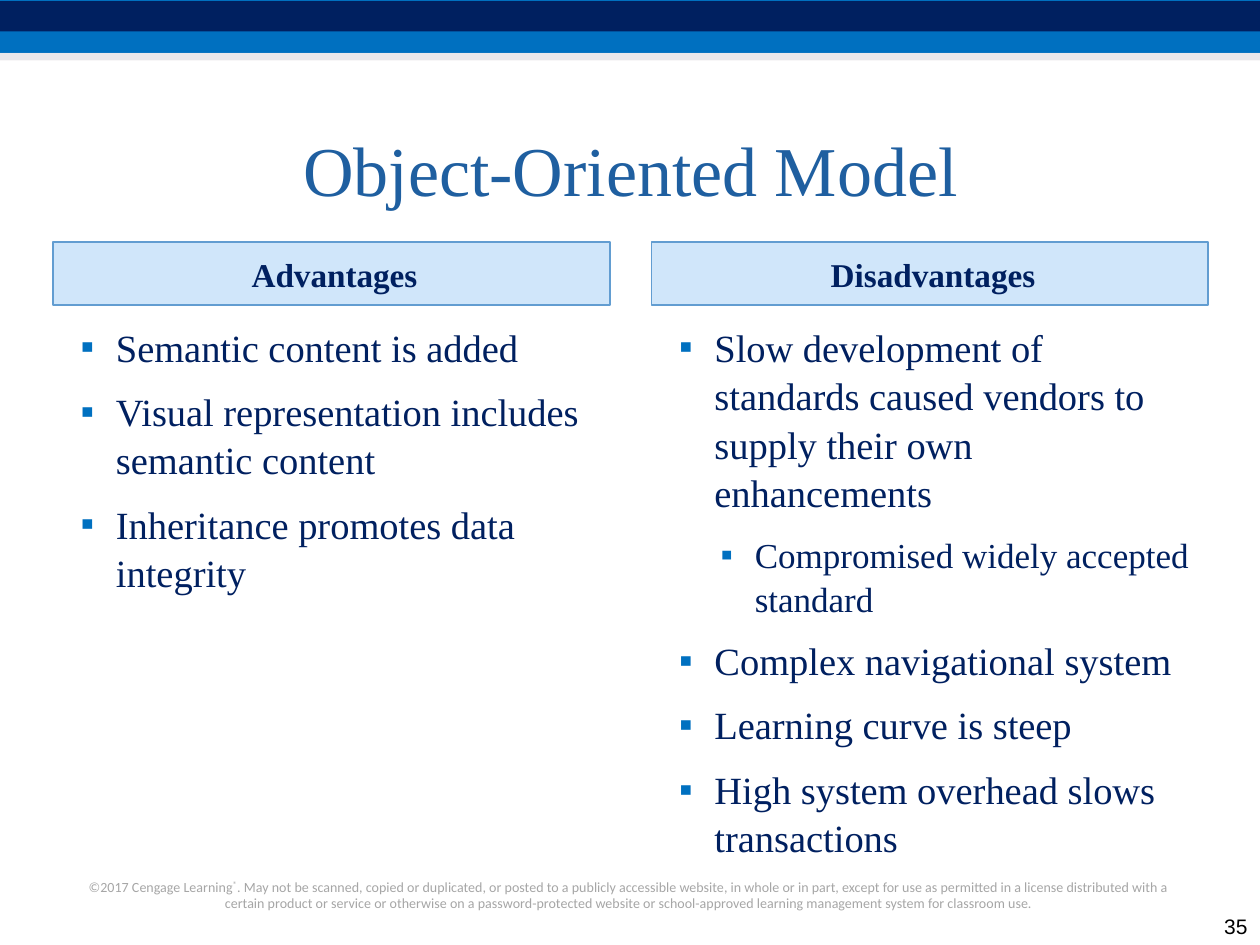
from lxml import etree
from pptx import Presentation
from pptx.dml.color import RGBColor
from pptx.enum.shapes import MSO_SHAPE
from pptx.enum.text import MSO_ANCHOR, MSO_AUTO_SIZE, PP_ALIGN
from pptx.oxml.ns import qn
from pptx.util import Inches, Pt

RECTANGLE = MSO_SHAPE.RECTANGLE
TOP, MIDDLE, BOTTOM = MSO_ANCHOR.TOP, MSO_ANCHOR.MIDDLE, MSO_ANCHOR.BOTTOM
LEFT, CENTER, RIGHT = PP_ALIGN.LEFT, PP_ALIGN.CENTER, PP_ALIGN.RIGHT
NO_FIT = MSO_AUTO_SIZE.NONE

BLUE = RGBColor(0x00, 0x70, 0xC0)
NAVY = RGBColor(0x00, 0x20, 0x60)
PALE = RGBColor(0xD8, 0xD3, 0xD9)
TITLE_BLUE = RGBColor(0x1F, 0x5F, 0xA0)
HEADER_BLUE = RGBColor(0x46, 0x9F, 0xED)
BORDER_BLUE = RGBColor(0x62, 0x9D, 0xD1)
GREY = RGBColor(0xA6, 0xA6, 0xA6)
BLACK = RGBColor(0x00, 0x00, 0x00)

SERIF = "Times New Roman"
LEVELS = [(0.4, -0.28, 22), (0.72, -0.27, 20)]
COLUMN_LEFTS = [0.42, 5.17]
COLUMN_WIDTH = 4.42

BANDS = [
    (0, 0.42, BLUE, 100),
    (0.01, 0.24, NAVY, 100),
    (0.42, 0.06, PALE, 50),
]
COLUMNS = [
    ("Advantages", [
        (0, "Semantic content is added"),
        (0, "Visual representation includes semantic content"),
        (0, "Inheritance promotes data integrity"),
    ]),
    ("Disadvantages", [
        (0, "Slow development of standards caused vendors to supply their own enhancements"),
        (1, "Compromised widely accepted standard"),
        (0, "Complex navigational system"),
        (0, "Learning curve is steep"),
        (0, "High system overhead slows transactions"),
    ]),
]
COPYRIGHT = [
    ("©2017 Cengage Learning", False),
    ("®", True),
    (". May not be scanned, copied or duplicated, or posted to a publicly accessible "
     "website, in whole or in part, except for use as permitted in a license distributed "
     "with a certain product or service or otherwise on a password-protected website or "
     "school-approved learning management system for classroom use.", False),
]


class SlideBuilder:
    def __init__(self, page):
        self.page = page

    def format_font(self, font, color, **values):
        for name, value in values.items():
            setattr(font, name, value)
        font.color.rgb = color

    def fill(self, shape, color, opacity):
        shape.fill.solid()
        shape.fill.fore_color.rgb = color
        if opacity < 100:
            tint = shape.fill._xPr.find(qn("a:solidFill"))[0]
            etree.SubElement(tint, qn("a:alpha")).set("val", str(opacity * 1000))

    def band(self, top, height, color, opacity):
        shape = self.page.shapes.add_shape(
            RECTANGLE, 0, Inches(top), Inches(10), Inches(height))
        shape.shadow.inherit = False
        self.fill(shape, color, opacity)
        shape.line.fill.background()

    def placeholder(self, index, area, anchor):
        box = self.page.placeholders[index]
        box.left, box.top, box.width, box.height = map(Inches, area)
        frame = box.text_frame
        settings = {"word_wrap": True, "auto_size": NO_FIT, "vertical_anchor": anchor}
        for name, value in settings.items():
            setattr(frame, name, value)
        return box

    def title(self, text, area):
        para = self.placeholder(0, area, MIDDLE).text_frame.paragraphs[0]
        para.text = text
        para.alignment = CENTER
        self.format_font(para.runs[0].font, TITLE_BLUE, name=SERIF, size=Pt(40))

    def header(self, index, text, area):
        box = self.placeholder(index, area, MIDDLE)
        self.fill(box, HEADER_BLUE, 25)
        box.line.color.rgb = BORDER_BLUE
        box.line.width = Pt(1)
        para = box.text_frame.paragraphs[0]
        para.text = text
        settings = {"alignment": CENTER, "space_before": Pt(0), "line_spacing": 1.05}
        for name, value in settings.items():
            setattr(para, name, value)
        para._p.get_or_add_pPr().set("marL", str(Inches(0.05)))
        self.format_font(para.runs[0].font, NAVY, name=SERIF, size=Pt(19), bold=True)

    def bullet(self, para, margin, indent):
        props = para._p.get_or_add_pPr()
        props.set("marL", str(Inches(margin)))
        props.set("indent", str(Inches(indent)))
        color = etree.SubElement(props, qn("a:buClr"))
        etree.SubElement(color, qn("a:srgbClr")).set("val", str(BLUE))
        etree.SubElement(props, qn("a:buFont")).set("typeface", "Arial")
        etree.SubElement(props, qn("a:buChar")).set("char", "▪")

    def bullets(self, index, items, area):
        frame = self.placeholder(index, area, TOP).text_frame
        for number, (level, text) in enumerate(items):
            para = frame.add_paragraph() if number else frame.paragraphs[0]
            para.text = text
            margin, indent, size = LEVELS[level]
            self.bullet(para, margin, indent)
            settings = {
                "level": level,
                "alignment": LEFT,
                "line_spacing": 1.05,
                "space_before": Pt(3 if number else 0),
                "space_after": Pt(6),
            }
            for name, value in settings.items():
                setattr(para, name, value)
            self.format_font(para.runs[0].font, NAVY, name=SERIF, size=Pt(size))

    def text(self, spans, area, alignment, anchor, color, **values):
        box = self.page.shapes.add_textbox(*map(Inches, area))
        frame = box.text_frame
        frame.word_wrap = True
        frame.vertical_anchor = anchor
        para = frame.paragraphs[0]
        para.alignment = alignment
        for text, raised in spans:
            span = para.add_run()
            span.text = text
            self.format_font(span.font, color, **values)
            if raised:
                span._r.get_or_add_rPr().set("baseline", "30000")


def main():
    deck = Presentation()
    deck.slide_width, deck.slide_height = Inches(10), Inches(7.5)
    builder = SlideBuilder(deck.slides.add_slide(deck.slide_layouts[4]))
    for band in BANDS:
        builder.band(*band)
    builder.title("Object-Oriented Model", (0.42, 0.75, 9.17, 1.17))
    for number, (heading, items) in enumerate(COLUMNS):
        left = COLUMN_LEFTS[number]
        builder.header(2 * number + 1, heading, (left, 1.92, COLUMN_WIDTH, 0.5))
        builder.bullets(2 * number + 2, items, (left, 2.5, COLUMN_WIDTH, 4.25))
    builder.text(COPYRIGHT, (0.58, 6.92, 8.83, 0.37), CENTER, TOP, GREY,
                 name="Calibri", size=Pt(8))
    builder.text([("35", False)], (9.5, 7.17, 0.5, 0.33), RIGHT, BOTTOM, BLACK,
                 name="Arial", size=Pt(12))
    deck.save("out.pptx")


if __name__ == "__main__":
    main()
